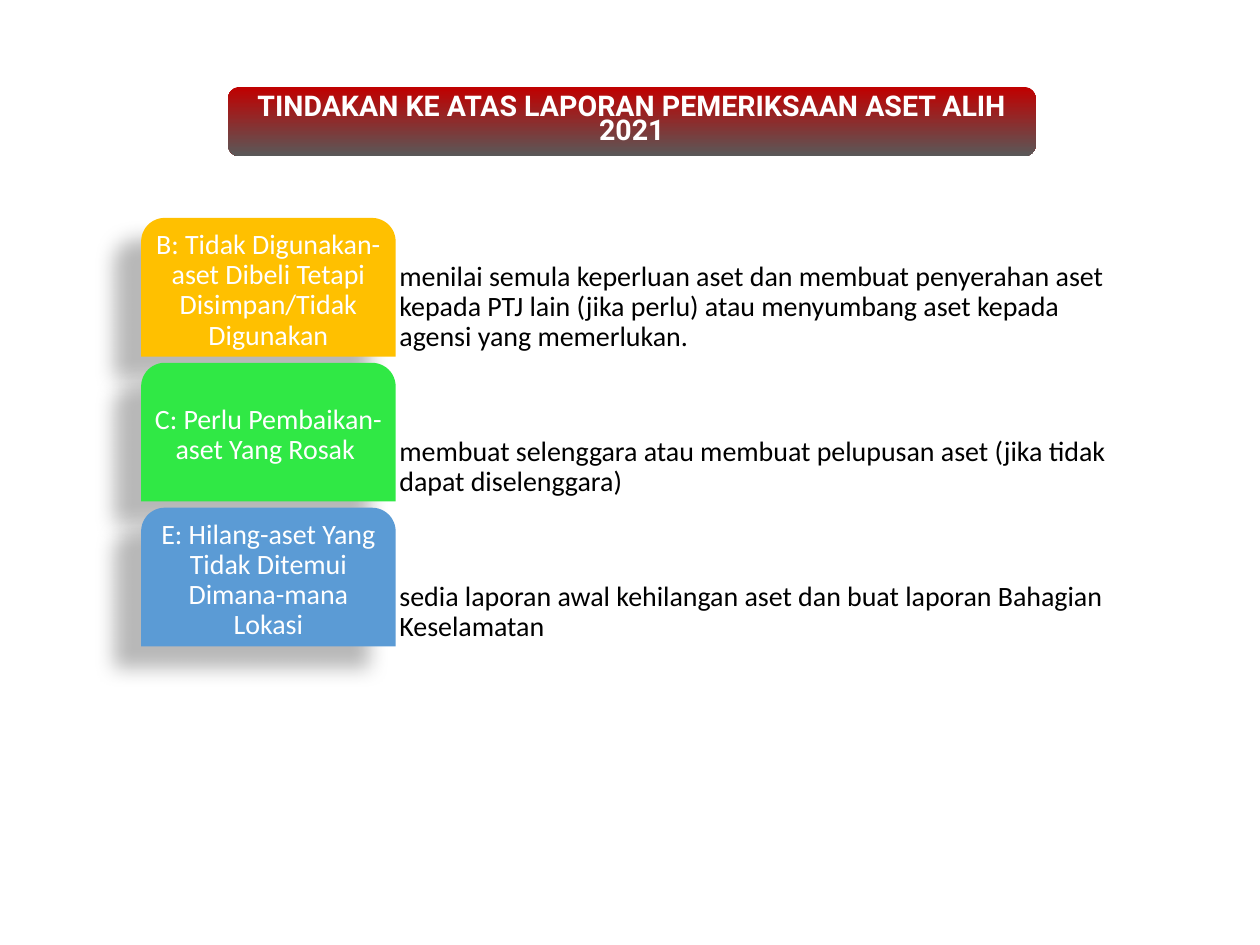
from lxml.etree import SubElement
from pptx import Presentation
from pptx.dml.color import RGBColor
from pptx.enum.shapes import MSO_SHAPE
from pptx.enum.text import MSO_ANCHOR, PP_ALIGN
from pptx.oxml.ns import qn
from pptx.util import Inches, Pt

hues = {
    "red": "C00000", "gray": "595959", "white": "FFFFFF", "black": "000000",
    "gold": "FFC000", "green": "30E845", "blue": "5B9BD5",
}


def write(shape, text, size, hue, font="Calibri", bold=False, space=0.9,
          align=PP_ALIGN.CENTER, anchor=MSO_ANCHOR.MIDDLE, pad=(0.03, 0.03)):
    frame = shape.text_frame
    frame.word_wrap = True
    frame.vertical_anchor = anchor
    frame.margin_left = frame.margin_right = Inches(pad[0])
    frame.margin_top = frame.margin_bottom = Inches(pad[1])
    para = frame.paragraphs[0]
    para.alignment = align
    para.line_spacing = space
    run = para.add_run()
    run.text = text
    run.font.name = font
    run.font.size = Pt(size)
    run.font.bold = bold
    run.font.color.rgb = RGBColor.from_string(hues[hue])


def shade(shape):
    cast = SubElement(shape.shadow._element.find(qn("a:effectLst")), qn("a:outerShdw"),
                      blurRad=str(Pt(11.8)), dist=str(Pt(19.7)),
                      dir=str(141 * 60000), algn="ctr", rotWithShape="0")
    tone = SubElement(cast, qn("a:srgbClr"), val=hues["black"])
    SubElement(tone, qn("a:alpha"), val="28000")


deck = Presentation()
deck.slide_width = Inches(10)
deck.slide_height = Inches(7.5)
slide = deck.slides.add_slide(deck.slide_layouts[6])

title = slide.shapes.add_shape(MSO_SHAPE.FLOWCHART_ALTERNATE_PROCESS,
                               Inches(1.81), Inches(0.69), Inches(6.41), Inches(0.55))
title.shadow.inherit = False
title.line.fill.background()
title.fill.gradient()
title.fill.gradient_angle = 270
for stop, hue in zip(title.fill.gradient_stops, ("red", "gray")):
    stop.color.rgb = RGBColor.from_string(hues[hue])
write(title, "TINDAKAN KE ATAS LAPORAN PEMERIKSAAN ASET ALIH 2021",
      16.3, "white", font="Roboto", bold=True, space=0.7, pad=(0.07, 0.04))

rows = [
    ("gold", "B: Tidak Digunakan-aset Dibeli Tetapi Disimpan/Tidak Digunakan",
     "menilai semula keperluan aset dan membuat penyerahan aset kepada PTJ lain "
     "(jika perlu) atau menyumbang aset kepada agensi yang memerlukan."),
    ("green", "C: Perlu Pembaikan-aset Yang Rosak ",
     "membuat selenggara atau membuat pelupusan aset (jika tidak dapat diselenggara)"),
    ("blue", "E: Hilang-aset Yang Tidak Ditemui Dimana-mana Lokasi",
     "sedia laporan awal kehilangan aset dan buat laporan Bahagian Keselamatan"),
]
left, top, wide, high, step = 1.12, 1.73, 2.02, 1.1, 1.15

for i, (hue, label, action) in enumerate(rows):
    y = Inches(top + i * step)
    note = slide.shapes.add_textbox(Inches(left + wide), y, Inches(5.75), Inches(high))
    write(note, action, 16, "black", align=PP_ALIGN.LEFT, anchor=MSO_ANCHOR.BOTTOM)

    tab = slide.shapes.add_shape(MSO_SHAPE.ROUND_2_SAME_RECTANGLE,
                                 Inches(left), y, Inches(wide), Inches(high))
    tab.adjustments[0] = 0.17
    tab.fill.solid()
    tab.fill.fore_color.rgb = RGBColor.from_string(hues[hue])
    tab.line.fill.background()
    tab.shadow.inherit = False
    shade(tab)
    write(tab, label, 16, "white")

deck.save("out.pptx")
